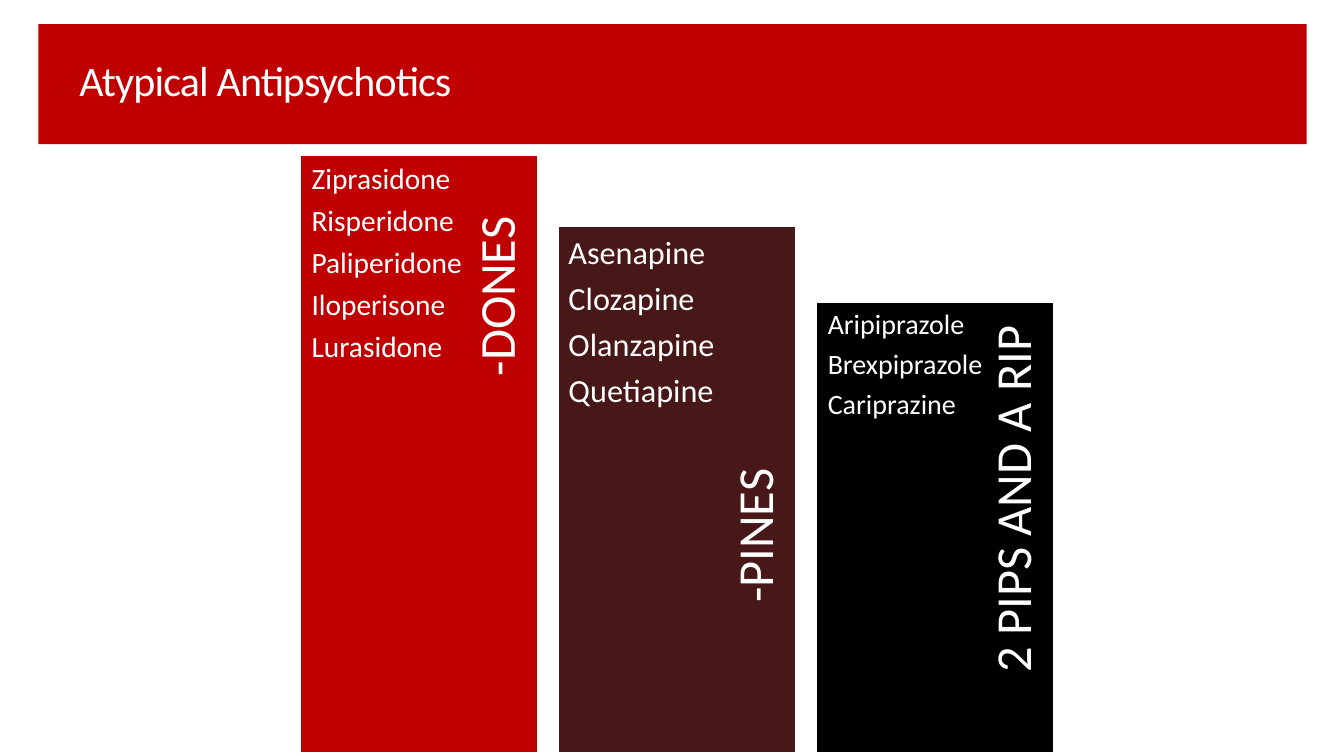
"""Build the Atypical Antipsychotics slide with three descending drug columns."""
from dataclasses import dataclass

import pptx
import pptx.dml.color
import pptx.enum.shapes
import pptx.enum.text
import pptx.util
from pptx.util import Inches

FONT = "Calibri"
WHITE = "FFFFFF"
RED = "C00000"
BAR_LEFT, BAR_STEP, BAR_WIDTH, BAR_BOTTOM = 2.98, 2.56, 2.35, 7.47
LABEL_CENTER, LABEL_HEIGHT, LABEL_BOTTOM = 1.99, 0.61, 7.02


@dataclass
class DrugColumn:
    suffix: str
    color: str
    top: float
    label_top: float
    drugs: list[str]
    size: int
    inset: float
    list_shift: float
    list_width: float


COLUMNS = [
    DrugColumn("-DONES", RED, 1.54, 1.92,
               ["Ziprasidone", "Risperidone", "Paliperidone", "Iloperisone", "Lurasidone"],
               21, 0.09, 0.02, 1.86),
    DrugColumn("-PINES", "481818", 2.25, 4.42,
               ["Asenapine", "Clozapine", "Olanzapine", "Quetiapine"],
               23, 0.1, 0, 1.67),
    DrugColumn("2 PIPS AND A RIP", "000000", 3, 3,
               ["Aripiprazole", "Brexpiprazole", "Cariprazine"],
               20, 0.08, 0.03, 1.89),
]


def rgb(color: str) -> pptx.dml.color.RGBColor:
    """Turn a hex string into a colour."""
    return pptx.dml.color.RGBColor.from_string(color)


def add_rectangle(page, left: float, top: float, width: float, height: float,
                  color: str, outlined: bool = False):
    """Draw a filled rectangle, with a thin white outline if asked."""
    shape = page.shapes.add_shape(pptx.enum.shapes.MSO_SHAPE.RECTANGLE, Inches(left),
                                  Inches(top), Inches(width), Inches(height))
    shape.shadow.inherit = False
    shape.fill.solid()
    shape.fill.fore_color.rgb = rgb(color)
    if outlined:
        shape.line.color.rgb = rgb(WHITE)
        shape.line.width = pptx.util.Pt(0.85)
    else:
        shape.line.fill.background()
    return shape


def add_text(page, left: float, top: float, width: float, height: float, lines: list[str],
             size: int, insets: tuple[float, float, float, float], space: float = 0,
             middle: bool = False):
    """Write white paragraphs in a box; insets run left, top, right, bottom."""
    box = page.shapes.add_textbox(Inches(left), Inches(top), Inches(width), Inches(height))
    frame = box.text_frame
    frame.word_wrap = True
    frame.margin_left, frame.margin_top, frame.margin_right, frame.margin_bottom = (
        Inches(inset) for inset in insets)
    anchor = pptx.enum.text.MSO_ANCHOR
    frame.vertical_anchor = anchor.MIDDLE if middle else anchor.TOP
    frame.text = "\n".join(lines)
    for paragraph in frame.paragraphs:
        paragraph.line_spacing = 0.9
        paragraph.space_after = pptx.util.Pt(space)
        paragraph.font.name = FONT
        paragraph.font.size = pptx.util.Pt(size)
        paragraph.font.color.rgb = rgb(WHITE)
    return box


def add_header(page) -> None:
    """Draw the red band and its title."""
    add_rectangle(page, 0.38, 0.24, 12.58, 1.19, RED)
    title = add_text(page, 0.69, 0.33, 11.54, 0.99, ["Atypical Antipsychotics"], 30,
                     (0.1, 0.05, 0.1, 0.05), middle=True)
    span = title.text_frame.paragraphs[0].runs[0]
    span._r.get_or_add_rPr().set("spc", "-60")


def add_column(page, column: DrugColumn, left: float) -> None:
    """Draw one bar with its upright suffix and its drug list."""
    height = BAR_BOTTOM - column.top
    add_rectangle(page, left, column.top, BAR_WIDTH, height, column.color, outlined=True)
    length = LABEL_BOTTOM - column.label_top
    middle = (LABEL_BOTTOM + column.label_top) / 2
    label = add_text(page, left + LABEL_CENTER - length / 2, middle - LABEL_HEIGHT / 2,
                     length, LABEL_HEIGHT, [column.suffix], 36, (0.15, 0, 0.23, 0.05),
                     middle=True)
    label.rotation = 270
    label.text_frame.paragraphs[0].alignment = pptx.enum.text.PP_ALIGN.RIGHT
    add_text(page, left + column.list_shift, column.top, column.list_width, height,
             column.drugs, column.size, (column.inset,) * 4, space=0.35 * column.size)


def main() -> None:
    """Build and save the deck."""
    deck = pptx.Presentation()
    deck.slide_width, deck.slide_height = Inches(13.33), Inches(7.5)
    page = deck.slides.add_slide(deck.slide_layouts[6])
    add_header(page)
    for index, column in enumerate(COLUMNS):
        add_column(page, column, BAR_LEFT + index * BAR_STEP)
    deck.save("out.pptx")


if __name__ == "__main__":
    main()
